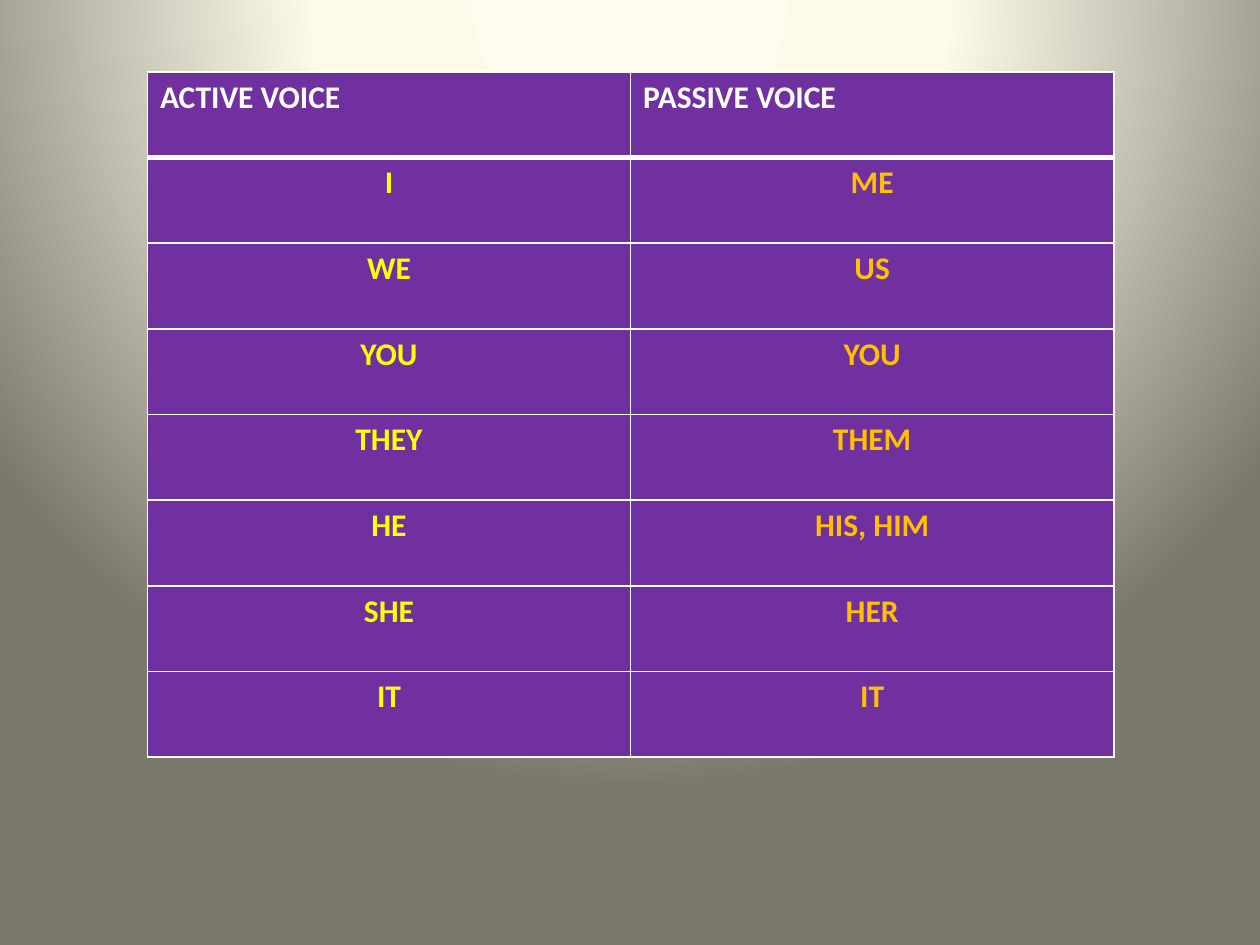
from dataclasses import dataclass

from lxml.etree import SubElement
from pptx import Presentation
from pptx.dml.color import RGBColor
from pptx.enum.text import PP_ALIGN as Align
from pptx.oxml.ns import qn
from pptx.util import Emu, Pt

PX_PER_INCH = 100


def px(length):
    return Emu(length * 914400 // PX_PER_INCH)


@dataclass(frozen=True)
class Theme:
    font: str = "Calibri"
    size: int = 18
    cell: str = "7030A0"
    border: str = "FFFFFF"
    heading: str = "FFFFFF"
    pronouns: tuple = ("FFFF00", "FFC000")
    backdrop: tuple = ((0, "FEFCEE"), (40, "FDFAEA"), (100, "7B796B"))
    thin: int = 1
    thick: int = 3


def write(frame, text, *, font, size, color, bold=True, align=Align.LEFT):
    paragraph = frame.paragraphs[0]
    paragraph.alignment = align
    run = paragraph.add_run()
    run.text = text
    run.font.name = font
    run.font.size = Pt(size)
    run.font.bold = bold
    run.font.color.rgb = RGBColor.from_string(color)


def add_solid(parent, color):
    solid = SubElement(parent, qn("a:solidFill"))
    SubElement(solid, qn("a:srgbClr"), val=color)


class SlideBuilder:
    def __init__(self, slide, theme):
        self.slide = slide
        self.theme = theme

    def backdrop(self, **focus):
        fill = self.slide.background.fill
        fill.gradient()
        gradient = self.slide.element.find(".//" + qn("a:gradFill"))
        for child in list(gradient):
            gradient.remove(child)
        stops = SubElement(gradient, qn("a:gsLst"))
        for percent, color in self.theme.backdrop:
            stop = SubElement(stops, qn("a:gs"), pos=str(percent * 1000))
            SubElement(stop, qn("a:srgbClr"), val=color)
        circle = SubElement(gradient, qn("a:path"), path="circle")
        edges = {side: str(percent * 1000) for side, percent in focus.items()}
        SubElement(circle, qn("a:fillToRect"), **edges)

    def borders(self, cell, **widths):
        properties = cell._tc.get_or_add_tcPr()
        for index, side in enumerate("LRTB"):
            width = widths.get(side, self.theme.thin)
            line = SubElement(properties, qn(f"a:ln{side}"), w=str(Pt(width)))
            add_solid(line, self.theme.border)
            properties.insert(index, line)

    def table(self, rows, left, top, width, height):
        theme = self.theme
        table = self.slide.shapes.add_table(
            len(rows), len(rows[0]), px(left), px(top), px(width), px(height)
        ).table
        table.horz_banding = False
        for r, row in enumerate(rows):
            for c, text in enumerate(row):
                cell = table.cell(r, c)
                cell.fill.solid()
                cell.fill.fore_color.rgb = RGBColor.from_string(theme.cell)
                self.borders(
                    cell,
                    T=theme.thick if r == 1 else theme.thin,
                    B=theme.thick if r == 0 else theme.thin,
                )
                write(
                    cell.text_frame,
                    text,
                    font=theme.font,
                    size=theme.size,
                    color=theme.pronouns[c] if r else theme.heading,
                    align=Align.CENTER if r else Align.LEFT,
                )


def main():
    deck = Presentation()
    deck.slide_width, deck.slide_height = px(1000), px(750)
    builder = SlideBuilder(deck.slides.add_slide(deck.slide_layouts[6]), Theme())
    builder.backdrop(l=50, t=-80, r=50, b=180)
    voices = [
        ("ACTIVE VOICE", "PASSIVE VOICE"),
        ("I", "ME"),
        ("WE", "US"),
        ("YOU", "YOU"),
        ("THEY", "THEM"),
        ("HE", "HIS, HIM"),
        ("SHE", "HER"),
        ("IT", "IT"),
    ]
    builder.table(voices, left=117, top=57, width=767, height=544)
    deck.save("out.pptx")


if __name__ == "__main__":
    main()
